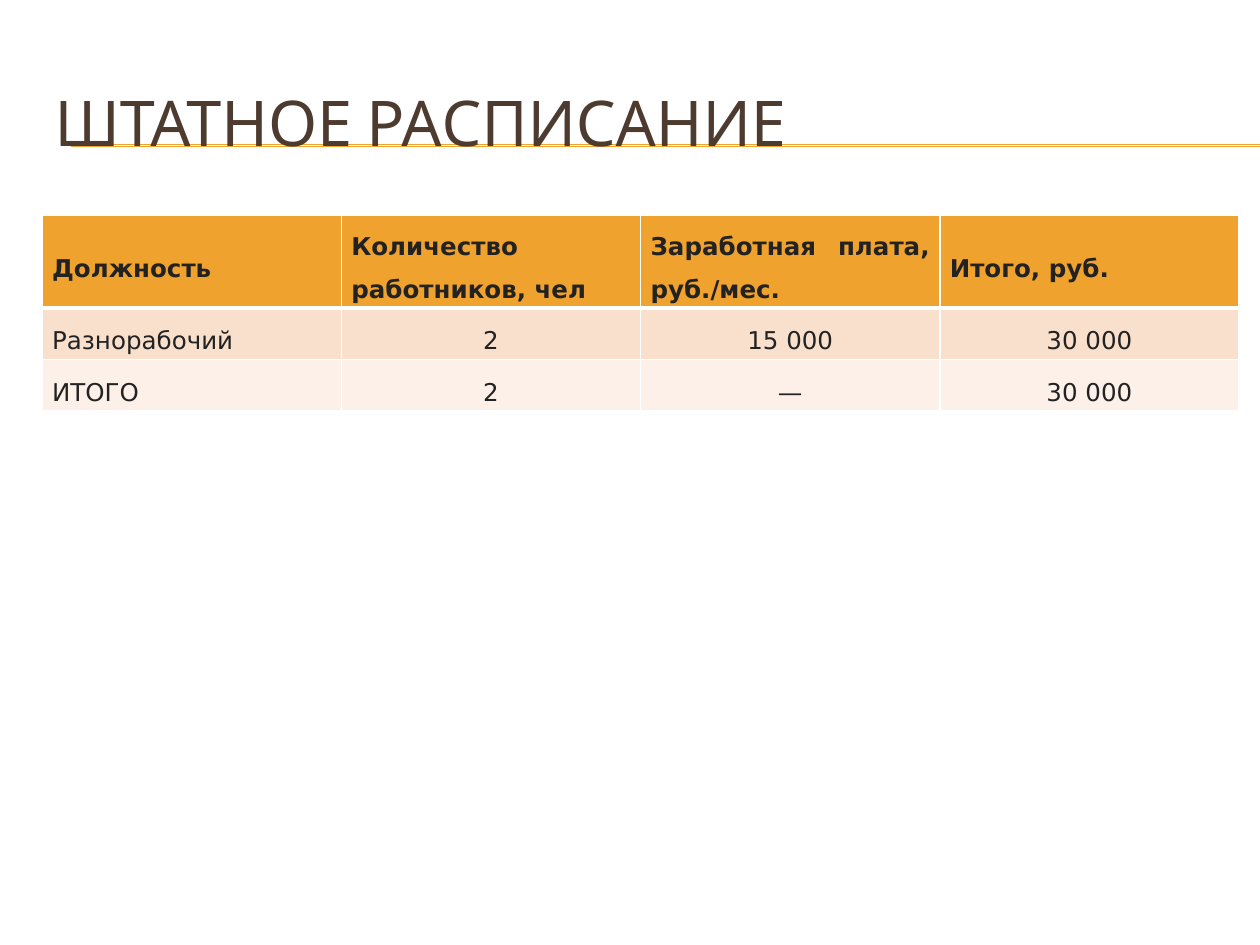
from lxml.etree import SubElement
from pptx import Presentation
from pptx.dml.color import RGBColor
from pptx.enum.shapes import MSO_CONNECTOR
from pptx.enum.text import MSO_ANCHOR, PP_ALIGN
from pptx.oxml.ns import qn
from pptx.util import Cm, Pt

COLORS = {
    "accent": "F0A22E",
    "title": "4E3B30",
    "text": "222222",
    "border": "FFFFFF",
    "odd_row": "F9E0CD",
    "even_row": "FCF0E8",
}
PAGE_WIDTH, PAGE_HEIGHT = 25.4, 19.05
STAFF = [
    ["Должность", "Количество работников, чел", "Заработная плата, руб./мес.", "Итого, руб."],
    ["Разнорабочий", "2", "15 000", "30 000"],
    ["ИТОГО", "2", "—", "30 000"],
]


def color(name):
    return RGBColor.from_string(COLORS[name])


def write_text(frame, text, *, font, size, ink, bold=False,
               align=PP_ALIGN.LEFT, line_spacing=None, space_after=None):
    frame.word_wrap = True
    para = frame.paragraphs[0]
    para.alignment = align
    para.line_spacing = line_spacing
    para.space_after = space_after
    span = para.add_run()
    span.text = text
    span.font.name = font
    span.font.size = Pt(size)
    span.font.bold = bold
    span.font.color.rgb = color(ink)


def add_rule(page, left, right, top):
    rule = page.shapes.add_connector(
        MSO_CONNECTOR.STRAIGHT, Cm(left), Cm(top), Cm(right), Cm(top))
    rule.line.color.rgb = color("accent")
    rule.line.width = Pt(0.75)
    SubElement(rule._element.spPr, qn("a:effectLst"))


def add_title(page, left, top, width, height):
    """Place the heading with the double rule that runs to the page edge."""
    for offset in (1.65, 1.68):
        add_rule(page, left + 0.58, PAGE_WIDTH, top + offset)
    box = page.shapes.add_textbox(Cm(left), Cm(top), Cm(width), Cm(height))
    box.text_frame.vertical_anchor = MSO_ANCHOR.MIDDLE
    write_text(box.text_frame, "ШТАТНОЕ РАСПИСАНИЕ", font="Cabin", size=36, ink="title")


def set_borders(cell, **widths):
    """Draw the cell borders; must come before the fill of the cell."""
    properties = cell._tc.get_or_add_tcPr()
    for side, width in widths.items():
        line = SubElement(properties, qn(f"a:ln{side}"), w=str(Pt(width)))
        fill = SubElement(line, qn("a:solidFill"))
        SubElement(fill, qn("a:srgbClr"), val=COLORS["border"])


def fill_cell(cell, text, row, column):
    is_header = row == 0
    set_borders(cell, L=1, R=1, T=3 if row == 1 else 1, B=3 if is_header else 1)
    cell.fill.solid()
    cell.fill.fore_color.rgb = color(("accent", "odd_row", "even_row")[row])
    cell.vertical_anchor = MSO_ANCHOR.MIDDLE
    cell.margin_left = cell.margin_right = Cm(0.2)
    cell.margin_top = cell.margin_bottom = Cm(0.05)
    justified = is_header or column == 0
    write_text(cell.text_frame, text, font="DejaVu Sans", size=14, ink="text",
               bold=is_header, line_spacing=1.5, space_after=Pt(13.6),
               align=PP_ALIGN.JUSTIFY if justified else PP_ALIGN.CENTER)


def add_staff_table(page, left, top, width, row_heights):
    table = page.shapes.add_table(
        len(STAFF), len(STAFF[0]), Cm(left), Cm(top), Cm(width), Cm(sum(row_heights))).table
    for column in table.columns:
        column.width = Cm(width / len(STAFF[0]))
    for row, height in zip(table.rows, row_heights):
        row.height = Cm(height)
    for row, texts in enumerate(STAFF):
        for column, text in enumerate(texts):
            fill_cell(table.cell(row, column), text, row, column)


def main():
    deck = Presentation()
    deck.slide_width, deck.slide_height = Cm(PAGE_WIDTH), Cm(PAGE_HEIGHT)
    page = deck.slides.add_slide(deck.slide_layouts[6])
    add_title(page, 0.85, 1.27, 24.13, 2.34)
    add_staff_table(page, 0.85, 4.33, 24.13, [1.82, 1.04, 1.04])
    deck.save("out.pptx")


if __name__ == "__main__":
    main()
